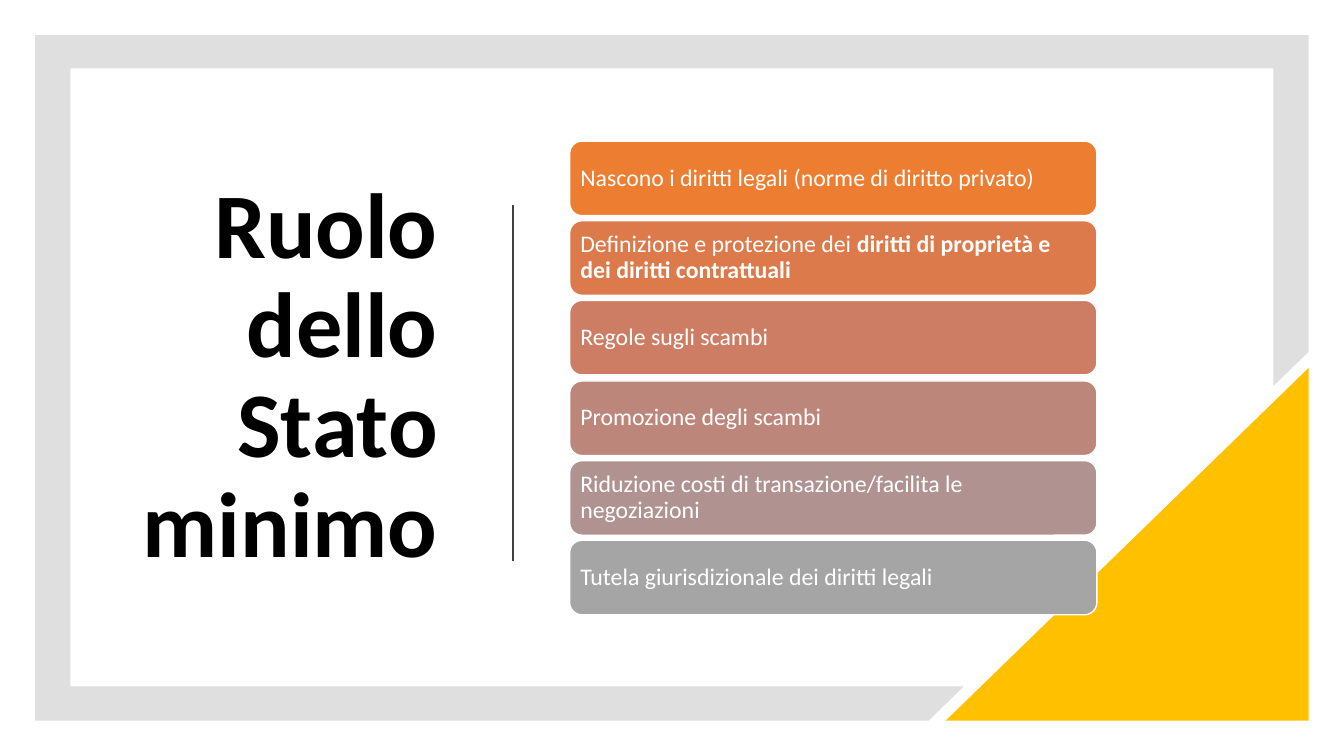
from lxml.etree import SubElement
from pptx import Presentation
from pptx.dml.color import RGBColor
from pptx.enum.shapes import MSO_CONNECTOR, MSO_SHAPE
from pptx.enum.text import MSO_ANCHOR, PP_ALIGN
from pptx.oxml.ns import qn
from pptx.util import Pt

EMU_PER_PX = 9144  # 100 px to the inch

DUTIES = [
    ("ED7D31", [("Nascono i diritti legali (norme di diritto privato)", False)]),
    ("DC7A4B", [("Definizione e protezione dei ", False),
                ("diritti di proprietà e dei diritti contrattuali", True)]),
    ("CC7D64", [("Regole sugli scambi", False)]),
    ("BD867B", [("Promozione degli scambi", False)]),
    ("B09391", [("Riduzione costi di transazione/facilita le negoziazioni", False)]),
    ("A5A5A5", [("Tutela giurisdizionale dei diritti legali", False)]),
]
FRAME = [(35, 35), (1298, 35), (1298, 349), (1263, 383), (1263, 68), (70, 68),
         (70, 681), (956, 681), (921, 715), (35, 715)]


def px(*lengths):
    return [length * EMU_PER_PX for length in lengths]


def color(value):
    return RGBColor.from_string(value)


class SlideBuilder:
    font = "Calibri"

    def __init__(self, page):
        self.page = page

    def paint(self, shape, fill, outline=None):
        shape.shadow.inherit = False
        shape.fill.solid()
        shape.fill.fore_color.rgb = color(fill)
        if outline:
            shape.line.color.rgb = color(outline)
            shape.line.width = Pt(1)
        else:
            shape.line.fill.background()

    def set_text(self, shape, spans, size, ink, align, inset):
        """Fill a shape with one paragraph of (text, bold) spans."""
        frame = shape.text_frame
        frame.word_wrap = True
        frame.vertical_anchor = MSO_ANCHOR.MIDDLE
        margin, = px(inset)
        frame.margin_left = frame.margin_right = margin
        frame.margin_top = frame.margin_bottom = margin
        paragraph = frame.paragraphs[0]
        paragraph.alignment = align
        paragraph.line_spacing = 0.9
        for text, bold in spans:
            span = paragraph.add_run()
            span.text = text
            span.font.name = self.font
            span.font.size = Pt(size)
            span.font.bold = bold
            span.font.color.rgb = color(ink)

    def outline_shape(self, points, fill, opacity):
        """Draw a closed polygon; opacity is a percentage."""
        builder = self.page.shapes.build_freeform(*points[0], scale=EMU_PER_PX)
        builder.add_line_segments(points[1:], close=True)
        shape = builder.convert_to_shape()
        self.paint(shape, fill)
        solid = shape.element.spPr.find(qn("a:solidFill"))
        SubElement(solid[0], qn("a:alpha")).set("val", str(opacity * 1000))

    def corner(self, left, top, width, height, fill):
        """Draw a right triangle with its right angle at bottom right."""
        shape = self.page.shapes.add_shape(
            MSO_SHAPE.RIGHT_TRIANGLE, *px(left, top, width, height))
        shape.element.spPr.find(qn("a:xfrm")).set("flipH", "1")
        self.paint(shape, fill)

    def title(self, left, top, width, height, text):
        box = self.page.shapes.add_textbox(*px(left, top, width, height))
        self.set_text(box, [(text, True)], 66, "000000", PP_ALIGN.RIGHT, 10)

    def divider(self, x, top, bottom):
        line = self.page.shapes.add_connector(
            MSO_CONNECTOR.STRAIGHT, *px(x, top, x, bottom))
        line.line.color.rgb = color("404040")
        line.line.width = Pt(1.5)
        SubElement(line.element.spPr, qn("a:effectLst"))

    def card(self, left, top, width, height, fill, spans):
        card = self.page.shapes.add_shape(
            MSO_SHAPE.ROUNDED_RECTANGLE, *px(left, top, width, height))
        self.paint(card, fill, "FFFFFF")
        self.set_text(card, spans, 17, "FFFFFF", PP_ALIGN.LEFT, 7)


def main():
    deck = Presentation()
    deck.slide_width, deck.slide_height = px(1333, 750)
    slide = SlideBuilder(deck.slides.add_slide(deck.slide_layouts[6]))
    slide.outline_shape(FRAME, "808080", 25)
    slide.corner(938, 365, 360, 350, "FFC000")
    slide.title(110, 130, 334, 490, "Ruolo dello Stato minimo")
    slide.divider(509, 203, 557)
    first_top, last_top = 140, 536
    for index, (fill, spans) in enumerate(DUTIES):
        top = first_top + round(index * (last_top - first_top) / (len(DUTIES) - 1))
        slide.card(565, top, 523, 74, fill, spans)
    deck.save("out.pptx")


if __name__ == "__main__":
    main()
